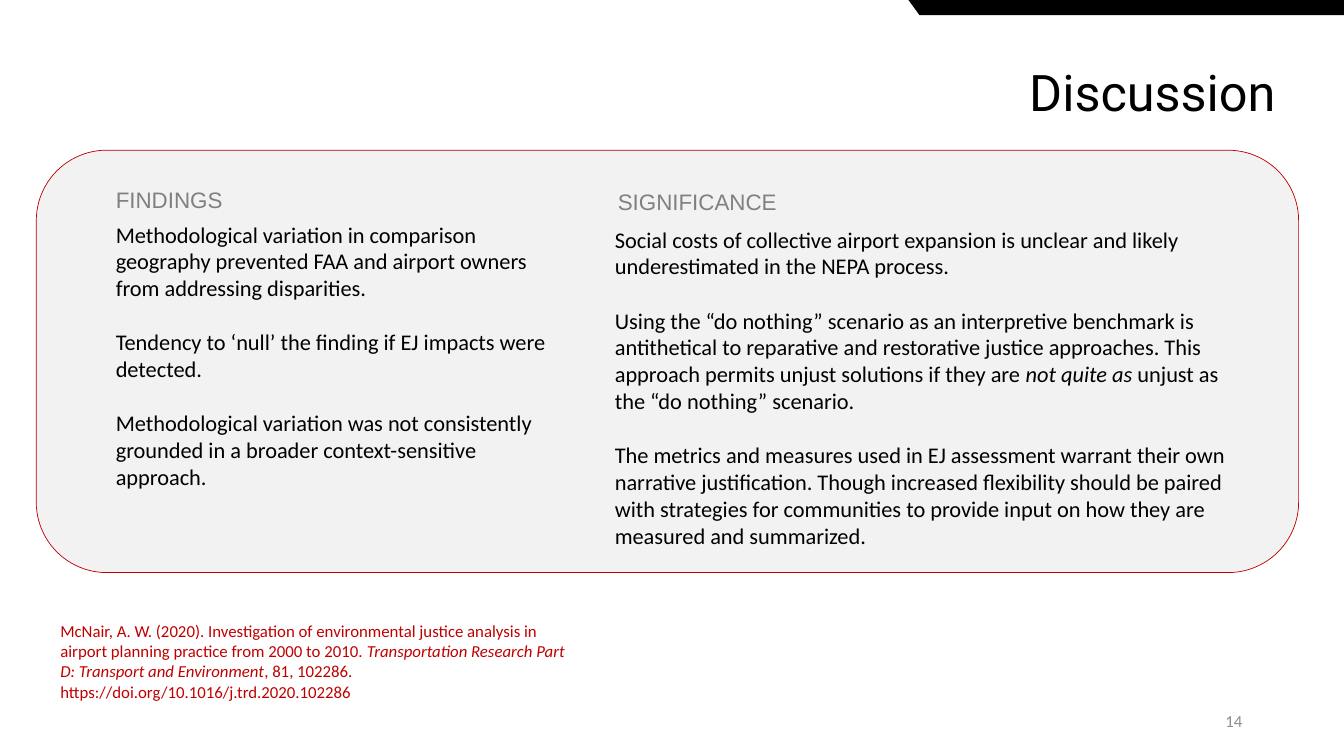
from dataclasses import dataclass

from pptx import Presentation
from pptx.dml.color import RGBColor
from pptx.enum import shapes, text
from pptx.slide import Slide
from pptx.util import Inches, Pt


@dataclass(frozen=True)
class Theme:
    black: RGBColor = RGBColor(0x00, 0x00, 0x00)
    red: RGBColor = RGBColor(0xC0, 0x00, 0x00)
    panel: RGBColor = RGBColor(0xF2, 0xF2, 0xF2)
    heading: RGBColor = RGBColor(0x80, 0x80, 0x80)
    page_number: RGBColor = RGBColor(0x8C, 0x8C, 0x8C)
    title_size: float = 36
    body_size: float = 16
    small_size: float = 12
    body_gap: float = 19.5
    title_font: str = "Roboto"
    heading_font: str = "Arial"
    body_font: str = "Calibri"


THEME = Theme()


@dataclass(frozen=True)
class Span:
    text: str
    italic: bool = False


@dataclass(frozen=True)
class TextBlock:
    left: float
    top: float
    width: float
    height: float
    paragraphs: list[list[Span]]
    size: float = THEME.body_size
    font: str = THEME.body_font
    color: RGBColor = THEME.black
    align: text.PP_ALIGN = text.PP_ALIGN.LEFT
    anchor: text.MSO_ANCHOR = text.MSO_ANCHOR.TOP
    line_spacing: float = 1.0


FINDINGS = [
    [Span("Methodological variation in comparison geography prevented FAA and airport owners "
          "from addressing disparities.")],
    [Span("Tendency to ‘null’ the finding if EJ impacts were detected.")],
    [Span("Methodological variation was not consistently grounded in a broader "
          "context-sensitive approach.")],
]

SIGNIFICANCE = [
    [Span("Social costs of collective airport expansion is unclear and likely underestimated "
          "in the NEPA process.")],
    [Span("Using the “do nothing” scenario as an interpretive benchmark is antithetical to "
          "reparative and restorative justice approaches. This approach permits unjust "
          "solutions if they are "),
     Span("not quite as ", italic=True),
     Span("unjust as the “do nothing” scenario.")],
    [Span("The metrics and measures used in EJ assessment warrant their own narrative "
          "justification. Though increased flexibility should be paired with strategies for "
          "communities to provide input on how they are measured and summarized.")],
]

CITATION = [
    [Span("McNair, A. W. (2020). Investigation of environmental justice analysis in airport "
          "planning practice from 2000 to 2010. "),
     Span("Transportation Research Part D: Transport and Environment", italic=True),
     Span(", 81, 102286. https://doi.org/10.1016/j.trd.2020.102286")],
]

TEXT_BLOCKS = [
    TextBlock(0.5, 0.63, 12.25, 0.65, [[Span("Discussion")]], THEME.title_size,
              THEME.title_font, align=text.PP_ALIGN.RIGHT, line_spacing=0.9),
    TextBlock(1.05, 2.14, 4.53, 3.06, FINDINGS),
    TextBlock(1.05, 1.8, 2.51, 0.37, [[Span("FINDINGS")]],
              font=THEME.heading_font, color=THEME.heading),
    TextBlock(6.03, 1.82, 3.96, 0.37, [[Span("SIGNIFICANCE")]],
              font=THEME.heading_font, color=THEME.heading),
    TextBlock(6, 2.19, 6.47, 3.6, SIGNIFICANCE),
    TextBlock(0.5, 6.11, 5.29, 0.91, CITATION, THEME.small_size, color=THEME.red),
    TextBlock(9.42, 6.95, 3, 0.4, [[Span("14")]], THEME.small_size,
              color=THEME.page_number, align=text.PP_ALIGN.RIGHT,
              anchor=text.MSO_ANCHOR.MIDDLE),
]


def add_corner_band(slide: Slide) -> None:
    builder = slide.shapes.build_freeform(Inches(9.12), Inches(0.15))
    corners = [(13.33, 0.15), (13.33, 0), (9.01, 0)]
    builder.add_line_segments([(Inches(x), Inches(y)) for x, y in corners], close=True)
    band = builder.convert_to_shape()
    band.shadow.inherit = False
    band.fill.solid()
    band.fill.fore_color.rgb = THEME.black
    band.line.fill.background()


def add_panel(slide: Slide) -> None:
    panel = slide.shapes.add_shape(
        shapes.MSO_SHAPE.ROUNDED_RECTANGLE,
        Inches(0.36), Inches(1.49), Inches(12.52), Inches(4.19))
    panel.shadow.inherit = False
    panel.fill.solid()
    panel.fill.fore_color.rgb = THEME.panel
    panel.line.color.rgb = THEME.red
    panel.line.width = Pt(0.5)


def add_text_block(slide: Slide, block: TextBlock) -> None:
    box = slide.shapes.add_textbox(
        Inches(block.left), Inches(block.top), Inches(block.width), Inches(block.height))
    frame = box.text_frame
    frame.word_wrap = True
    frame.vertical_anchor = block.anchor
    for index, spans in enumerate(block.paragraphs):
        paragraph = frame.add_paragraph() if index else frame.paragraphs[0]
        paragraph.alignment = block.align
        paragraph.line_spacing = block.line_spacing
        if index:
            paragraph.space_before = Pt(THEME.body_gap)
        for span in spans:
            run = paragraph.add_run()
            run.text = span.text
            run.font.name = block.font
            run.font.size = Pt(block.size)
            run.font.color.rgb = block.color
            run.font.italic = span.italic


def main() -> None:
    presentation = Presentation()
    presentation.slide_width = Inches(13.33)
    presentation.slide_height = Inches(7.5)
    slide = presentation.slides.add_slide(presentation.slide_layouts[6])
    add_corner_band(slide)
    add_panel(slide)
    for block in TEXT_BLOCKS:
        add_text_block(slide, block)
    presentation.save("out.pptx")


if __name__ == "__main__":
    main()
